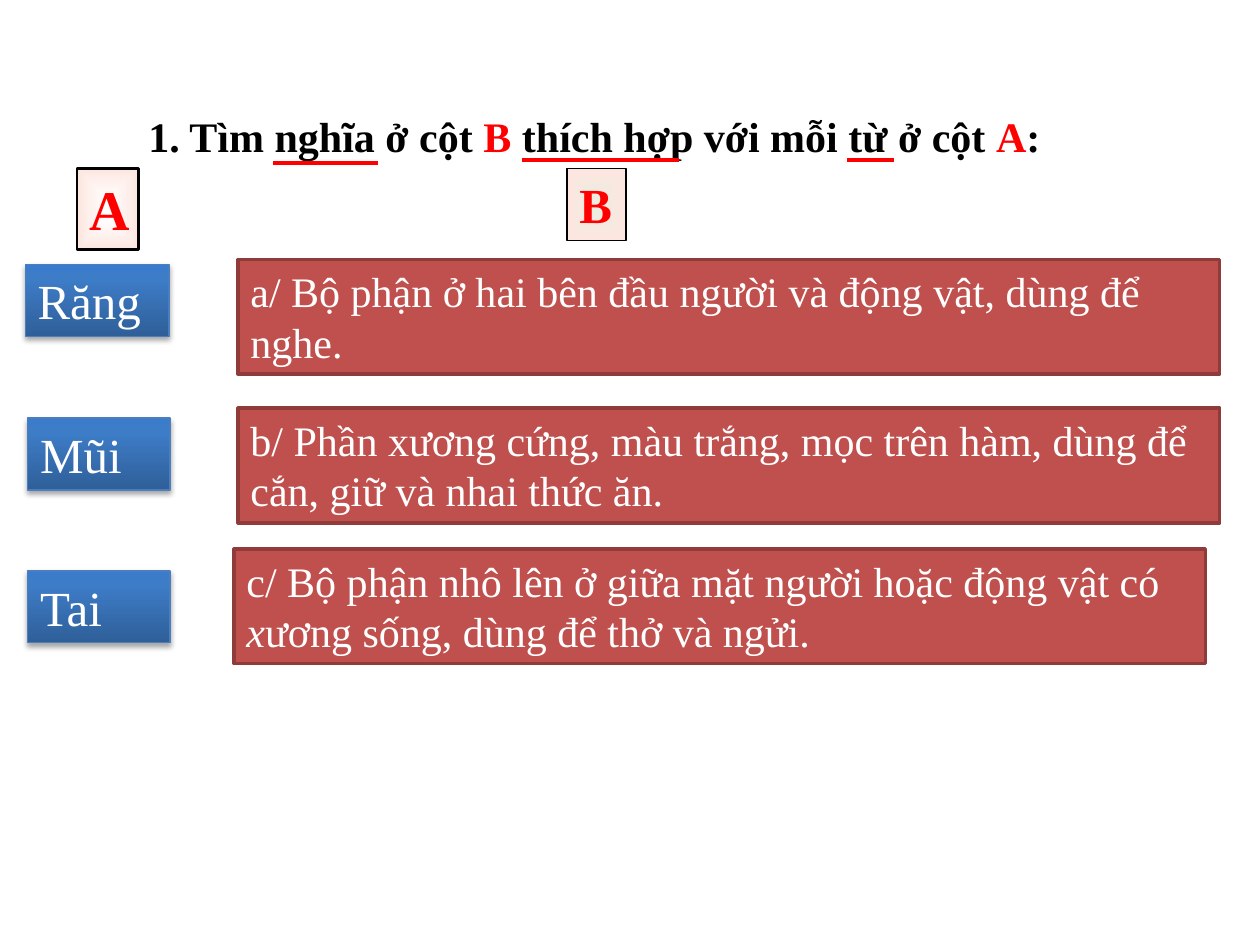
from lxml import etree
from pptx import Presentation
from pptx import util as u
from pptx.dml.color import RGBColor as Rgb
from pptx.enum import shapes, text
from pptx.oxml import parse_xml
from pptx.oxml.ns import nsdecls, qn

THEME = {
    "font": "Times New Roman", "title": 24, "word": 28, "mean": 24,
    "ink": "000000", "mark": "FF0000", "light": "FFFFFF",
    "brick": "C0504D", "edge": "8E3B39", "rim": "4B7EBC",
    "blue": [(0, "2F5F99"), (80, "3D7CC7"), (100, "3A7CCB")],
}
TITLE = [("1. Tìm nghĩa ở cột ", "ink"), ("B ", "mark"),
         ("thích hợp với mỗi từ ở cột ", "ink"), ("A", "mark"), (":", "ink")]
HEADS = [  # letter, box, size, line width, inner colour
    ("A", (1.55, 3.4, 1.24, 1.63), 32, 1.5, "FFFFFF"),
    ("B", (11.43, 3.4, 1.19, 1.45), 28, 1, "EEECE1"),
]
WORDS = [("Răng", (0.51, 5.33, 2.9, 1.45)),
         ("Mũi", (0.56, 8.43, 2.87, 1.45)),
         ("Tai", (0.56, 11.51, 2.87, 1.45))]
MEANS = [
    (["a/ Bộ phận ở hai bên đầu người và động vật, dùng để nghe."],
     (4.8, 5.23, 19.79, 2.31)),
    (["b/ Phần xương cứng, màu trắng, mọc trên hàm, dùng để cắn, giữ và nhai thức ăn."],
     (4.8, 8.23, 19.79, 2.31)),
    (["c/ Bộ phận nhô lên ở giữa mặt người hoặc động vật có ", "x",
      "ương sống, dùng để thở và ngửi."],
     (4.72, 11.07, 19.58, 2.31)),
]
RULES = [(5.51, 7.62, 3.28), (10.52, 13.69, 3.23), (17.07, 18.03, 3.23)]


def cms(box):
    """Turn numbers into lengths."""
    return [u.Cm(n) for n in box]


def rgb(name):
    """Look up a theme colour, or take a hex value."""
    return Rgb.from_string(THEME.get(name, name))


def write(shape, runs, size, bold=False):
    """Fill a shape with (text, colour) runs."""
    frame = shape.text_frame
    frame.word_wrap = True
    frame.auto_size = text.MSO_AUTO_SIZE.SHAPE_TO_FIT_TEXT
    frame.vertical_anchor = text.MSO_ANCHOR.TOP
    para = frame.paragraphs[0]
    para.alignment = text.PP_ALIGN.LEFT
    for words, tint in runs:
        run = para.add_run()
        run.text = words
        font = run.font
        font.name, font.size, font.bold = THEME["font"], u.Pt(size), bold
        font.color.rgb = rgb(tint)
        font.italic = words == "x"


def block(slide, box, fill, edge, width):
    """Add a flat rectangle."""
    shape = slide.shapes.add_shape(shapes.MSO_SHAPE.RECTANGLE, *cms(box))
    shape.fill.solid()
    shape.fill.fore_color.rgb = rgb(fill)
    shape.line.color.rgb = rgb(edge)
    shape.line.width = u.Pt(width)
    shape.shadow.inherit = False
    return shape


def blend(shape, stops, way):
    """Swap the solid fill for a gradient."""
    marks = "".join(f'<a:gs pos="{at * 1000}"><a:srgbClr val="{tint}"/></a:gs>'
                    for at, tint in stops)
    props = shape._element.spPr
    props.replace(props.find(qn("a:solidFill")), parse_xml(
        f'<a:gradFill {nsdecls("a")} rotWithShape="1">'
        f'<a:gsLst>{marks}</a:gsLst>{way}</a:gradFill>'))


def shade(shape):
    """Add a soft shadow below a shape."""
    shape._element.spPr.find(qn("a:effectLst")).append(parse_xml(
        f'<a:outerShdw {nsdecls("a")} blurRad="40000" dist="23000" dir="5400000" '
        'rotWithShape="0"><a:srgbClr val="000000"><a:alpha val="35000"/>'
        '</a:srgbClr></a:outerShdw>'))


def main():
    """Build the matching exercise."""
    deck = Presentation()
    deck.slide_width, deck.slide_height = cms((25.4, 19.05))
    slide = deck.slides.add_slide(deck.slide_layouts[6])
    glow = ('<a:path path="shape"><a:fillToRect l="50000" t="50000" '
            'r="50000" b="50000"/></a:path>')
    for name, box, size, width, core in HEADS:
        shape = block(slide, box, core, "ink", width)
        blend(shape, [(0, core), (100, "FDE6DF")], glow)
        write(shape, [(name, "mark")], size, True)
    for (word, spot), (parts, box) in zip(WORDS, MEANS):
        shape = block(slide, spot, "rim", "rim", 0.75)
        blend(shape, THEME["blue"], '<a:lin ang="16200000" scaled="0"/>')
        shade(shape)
        write(shape, [(word, "light")], THEME["word"])
        shape = block(slide, box, "brick", "edge", 2)
        write(shape, [(part, "light") for part in parts], THEME["mean"])
    title = slide.shapes.add_textbox(*cms((2.74, 2.11, 19.84, 1.3)))
    write(title, TITLE, THEME["title"], True)
    for start, end, top in RULES:
        rule = slide.shapes.add_connector(
            shapes.MSO_CONNECTOR.STRAIGHT, *cms((start, top, end, top)))
        rule.line.color.rgb = rgb("mark")
        rule.line.width = u.Pt(2.25)
        etree.SubElement(rule._element.spPr, qn("a:effectLst"))
    deck.save("out.pptx")


if __name__ == "__main__":
    main()
